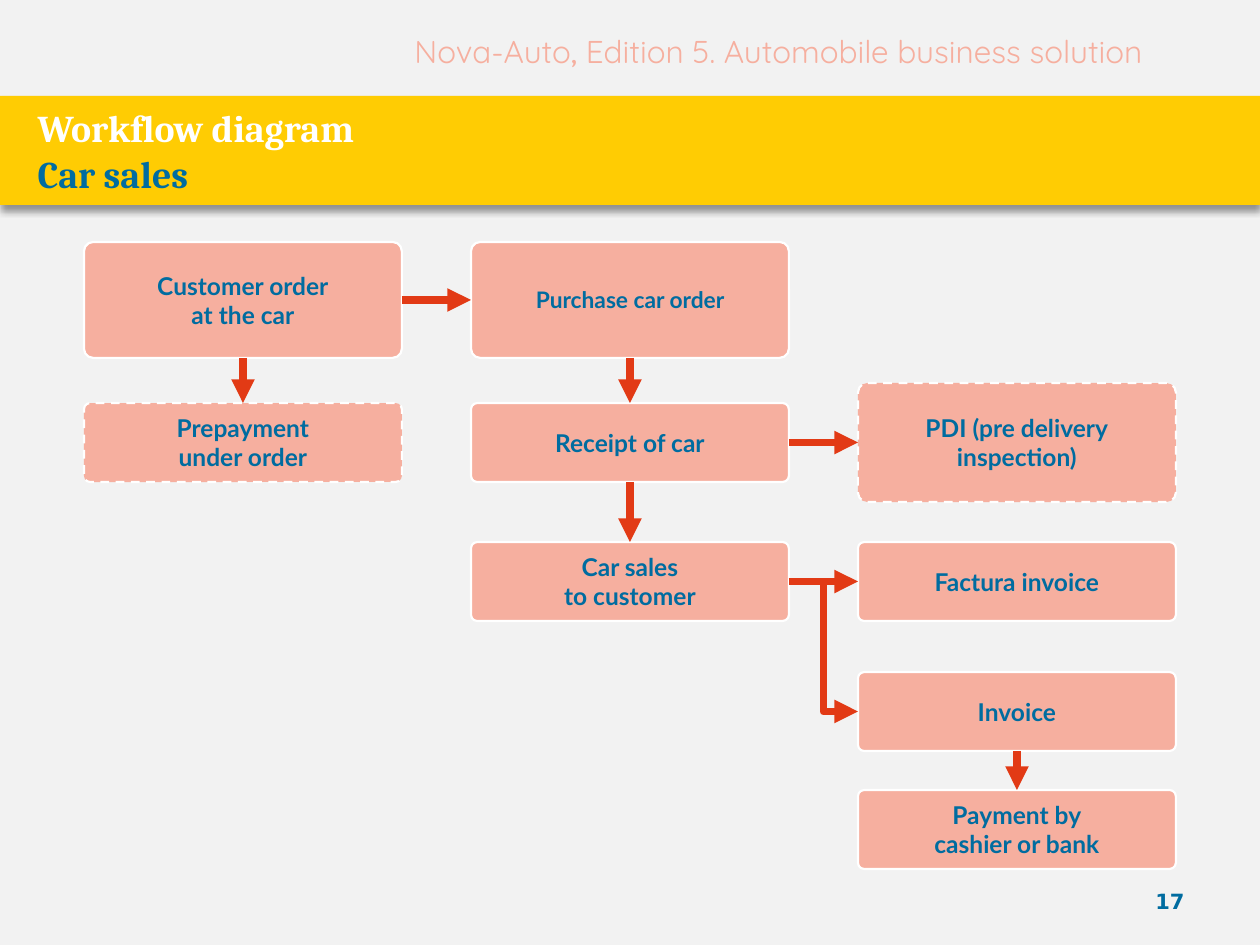
from dataclasses import dataclass

import pptx
import pptx.dml.color
import pptx.enum.dml
import pptx.enum.shapes
import pptx.enum.text
import pptx.oxml
import pptx.oxml.ns
import pptx.util

SCALE = 914400 / 126  # EMU in one px
COLORS = {
    "back": "F2F2F2",
    "band": "FFCC03",
    "box": "F6AF9F",
    "edge": "FFFFFF",
    "text": "006CA0",
    "arrow": "E23A15",
}
COLS = (84, 471, 858)
WIDTH = 318
DOWN, RIGHT = (2, 0), (3, 1)  # sites where an arrow leaves and arrives
ALIGN = pptx.enum.text.PP_ALIGN
MIDDLE = pptx.enum.text.MSO_ANCHOR.MIDDLE
SHAPE = pptx.enum.shapes.MSO_SHAPE
LINE = pptx.enum.shapes.MSO_CONNECTOR


@dataclass(frozen=True)
class Step:
    key: str
    col: int
    top: int
    high: int
    text: str
    size: int = 14
    dashed: bool = False


@dataclass(frozen=True)
class Arrow:
    start: str
    end: str
    sites: tuple[int, int]
    kind: LINE = LINE.STRAIGHT


STEPS = (
    Step("order", 0, 242, 116, "Customer order\nat the car"),
    Step("prepay", 0, 403, 79, "Prepayment\nunder order", dashed=True),
    Step("buy", 1, 242, 116, "Purchase car order", size=13),
    Step("receipt", 1, 403, 79, "Receipt of car"),
    Step("sale", 1, 542, 79, "Car sales\nto customer"),
    Step("check", 2, 383, 119, "PDI (pre delivery\ninspection)", dashed=True),
    Step("factura", 2, 542, 79, "Factura invoice"),
    Step("invoice", 2, 672, 79, "Invoice"),
    Step("pay", 2, 790, 79, "Payment by\ncashier or bank"),
)
ARROWS = (
    Arrow("order", "buy", RIGHT),
    Arrow("order", "prepay", DOWN),
    Arrow("buy", "receipt", DOWN),
    Arrow("receipt", "sale", DOWN),
    Arrow("receipt", "check", RIGHT),
    Arrow("sale", "factura", RIGHT),
    Arrow("sale", "invoice", RIGHT, LINE.ELBOW),
    Arrow("invoice", "pay", DOWN),
)


def px(*nums: int) -> list[int]:
    """Turn px into EMU."""
    return [pptx.util.Emu(round(num * SCALE)) for num in nums]


def rgb(name: str) -> pptx.dml.color.RGBColor:
    return pptx.dml.color.RGBColor.from_string(COLORS[name])


def style(font, name: str, size: float, color: str, bold: bool = False) -> None:
    font.name, font.size, font.bold = name, pptx.util.Pt(size), bold
    font.color.rgb = rgb(color)


def xml(text: str):
    """Make an element from markup with the a: prefix."""
    tag, rest = text.split(" ", 1)
    return pptx.oxml.parse_xml(f"{tag} {pptx.oxml.ns.nsdecls('a')} {rest}")


def draw_band(slide) -> None:
    band = slide.shapes.add_shape(SHAPE.RECTANGLE, *px(0, 96, 1260, 109))
    band.fill.solid()
    band.fill.fore_color.rgb = rgb("band")
    band.line.fill.background()
    band.shadow.inherit = False
    effects = band.element.spPr.find(pptx.oxml.ns.qn("a:effectLst"))
    effects.append(xml(
        '<a:outerShdw blurRad="50800" dist="38100" dir="5400000" rotWithShape="0">'
        '<a:srgbClr val="000000"><a:alpha val="40000"/></a:srgbClr></a:outerShdw>'
    ))
    band.element.getparent().insert(2, band.element)  # behind the title


def draw_title(slide) -> None:
    title = slide.shapes.title
    title.left, title.top, title.width, title.height = px(25, 97, 1134, 107)
    frame = title.text_frame
    frame.auto_size = pptx.enum.text.MSO_AUTO_SIZE.NONE
    frame.vertical_anchor = MIDDLE
    para = frame.paragraphs[0]
    para.alignment = ALIGN.LEFT
    style(para.font, "Cambria", 21.6, "edge", True)
    first = para.add_run()
    first.text = "Workflow diagram"
    first.font.color.rgb = rgb("edge")
    para.add_line_break()
    second = para.add_run()
    second.text = "Car sales"
    second.font.color.rgb = rgb("text")


def draw_header(slide) -> None:
    frame = slide.shapes.add_textbox(*px(402, 26, 820, 50)).text_frame
    frame.word_wrap = False
    para = frame.paragraphs[0]
    parts = (
        ("Nova-Auto", "Quicksand"),
        (",", "Cambria"),
        (" Edition 5. Automobile business solution", "Quicksand"),
    )
    for text, name in parts:
        run = para.add_run()
        run.text = text
        style(run.font, name, 18, "box")


def draw_number(slide) -> None:
    frame = slide.shapes.add_textbox(*px(903, 876, 294, 50)).text_frame
    frame.word_wrap = True
    frame.vertical_anchor = MIDDLE
    para = frame.paragraphs[0]
    para.text = "17"
    para.alignment = ALIGN.RIGHT
    style(para.font, "DejaVu Sans", 12, "text", True)


def draw_step(slide, step: Step):
    place = px(COLS[step.col], step.top, WIDTH, step.high)
    box = slide.shapes.add_shape(SHAPE.ROUNDED_RECTANGLE, *place)
    box.adjustments[0] = 0.08
    box.shadow.inherit = False
    box.fill.solid()
    box.fill.fore_color.rgb = rgb("box")
    box.line.color.rgb = rgb("edge")
    box.line.width = pptx.util.Pt(1.25)
    if step.dashed:
        box.line.dash_style = pptx.enum.dml.MSO_LINE.DASH
    frame = box.text_frame
    frame.word_wrap = False
    frame.vertical_anchor = MIDDLE
    frame.text = step.text
    for para in frame.paragraphs:
        para.alignment = ALIGN.CENTER
        style(para.font, "Lato", step.size, "text", True)
    return box


def draw_arrow(slide, arrow: Arrow, boxes: dict) -> None:
    link = slide.shapes.add_connector(arrow.kind, 0, 0, 0, 0)
    link.begin_connect(boxes[arrow.start], arrow.sites[0])
    link.end_connect(boxes[arrow.end], arrow.sites[1])
    link.line.color.rgb = rgb("arrow")
    link.line.width = pptx.util.Pt(4.5)
    props = link.element.spPr
    props.find(pptx.oxml.ns.qn("a:ln")).append(xml('<a:tailEnd type="triangle"/>'))
    props.append(xml("<a:effectLst />"))


def main() -> None:
    deck = pptx.Presentation()
    deck.slide_width, deck.slide_height = px(1260, 945)
    slide = deck.slides.add_slide(deck.slide_layouts[5])
    slide.background.fill.solid()
    slide.background.fill.fore_color.rgb = rgb("back")
    draw_band(slide)
    draw_header(slide)
    draw_title(slide)
    boxes = {step.key: draw_step(slide, step) for step in STEPS}
    for arrow in ARROWS:
        draw_arrow(slide, arrow, boxes)
    draw_number(slide)
    deck.save("out.pptx")


if __name__ == "__main__":
    main()
